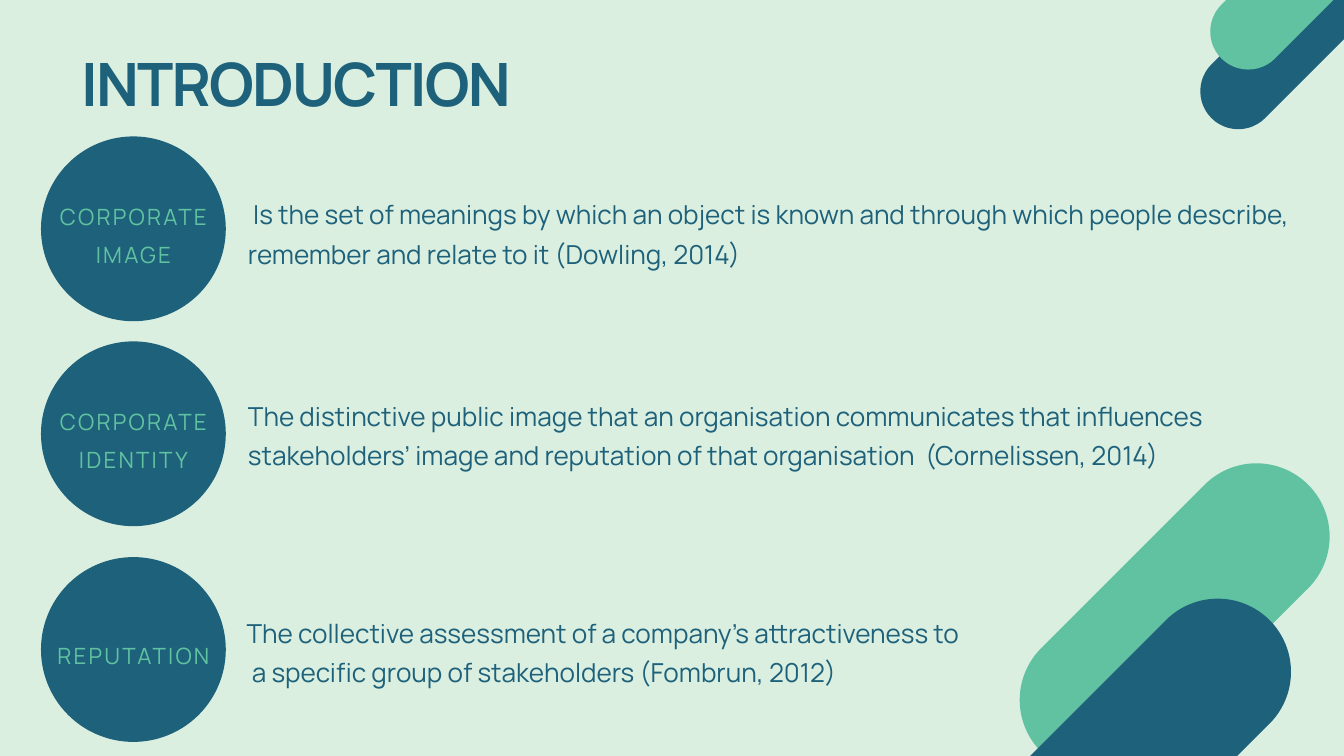
"""Build the introduction slide defining corporate image, identity and reputation."""
from dataclasses import dataclass

from pptx import Presentation
from pptx.dml.color import RGBColor
from pptx.enum.shapes import MSO_SHAPE as Preset
from pptx.enum.text import MSO_AUTO_SIZE as AutoSize, PP_ALIGN as Align
from pptx.util import Emu, Pt

EMU_PER_PX = 9144
MINT = RGBColor(0xDB, 0xEF, 0xE1)
TEAL = RGBColor(0x1D, 0x61, 0x7A)
GREEN = RGBColor(0x61, 0xC2, 0xA2)

FRAME = {
    "margin_left": 0,
    "margin_top": 0,
    "margin_right": 0,
    "margin_bottom": 0,
    "word_wrap": True,
    "auto_size": AutoSize.SHAPE_TO_FIT_TEXT,
}
CIRCLE_LEFT, CIRCLE_SIZE = 61, 275
LABEL_LEFT, LABEL_WIDTH = -16, 429
DEFINITION_WIDTH, DEFINITION_HEIGHT = 1631, 118


@dataclass(frozen=True)
class Box:
    left: int
    top: int
    width: int
    height: int

    def emu(self) -> list[Emu]:
        return [Emu(px * EMU_PER_PX) for px in (self.left, self.top, self.width, self.height)]


@dataclass(frozen=True)
class TextStyle:
    font: dict
    paragraph: dict
    color: RGBColor
    tracking: int = 0


@dataclass(frozen=True)
class Pill:
    box: Box
    color: RGBColor


@dataclass(frozen=True)
class Topic:
    circle_top: int
    label_top: int
    label_height: int
    label: tuple[str, ...]
    definition_left: int
    definition_top: int
    definition: tuple[str, ...]


TITLE = TextStyle(
    {"name": "Manrope", "size": Pt(64), "bold": True},
    {"alignment": Align.RIGHT, "line_spacing": Pt(70.4)},
    TEAL, -192,
)
LABEL = TextStyle(
    {"name": "Manrope", "size": Pt(24)},
    {"alignment": Align.CENTER, "line_spacing": Pt(40.8)},
    GREEN, 239,
)
DEFINITION = TextStyle(
    {"name": "Manrope", "size": Pt(28)},
    {"alignment": Align.LEFT, "line_spacing": Pt(42)},
    TEAL,
)

PILLS = (
    Pill(Box(1755, 4, 326, 113), TEAL),
    Pill(Box(1778, -65, 270, 113), GREEN),
    Pill(Box(1467, 811, 562, 218), GREEN),
    Pill(Box(1302, 1057, 688, 218), TEAL),
)
TOPICS = (
    Topic(203, 286, 115, ("CORPORATE", "IMAGE"), 369, 284, (
        " Is the set of meanings by which an object is known and through which "
        "people describe, remember and relate to it (Dowling, 2014)",
    )),
    Topic(508, 590, 115, ("CORPORATE", "IDENTITY"), 369, 584, (
        "The distinctive public image that an organisation communicates that influences "
        "stakeholders’ image and reputation of that organisation  (Cornelissen, 2014)",
    )),
    Topic(829, 939, 53, ("REPUTATION",), 367, 907, (
        "The collective assessment of a company’s attractiveness to",
        " a specific group of stakeholders (Fombrun, 2012)",
    )),
)


def apply(target: object, values: dict) -> None:
    for name, value in values.items():
        setattr(target, name, value)


def add_solid(slide, preset: Preset, box: Box, color: RGBColor):
    solid = slide.shapes.add_shape(preset, *box.emu())
    solid.shadow.inherit = False
    solid.fill.solid()
    solid.fill.fore_color.rgb = color
    solid.line.fill.background()
    return solid


def add_pill(slide, pill: Pill) -> None:
    capsule = add_solid(slide, Preset.ROUNDED_RECTANGLE, pill.box, pill.color)
    capsule.adjustments[0] = 0.5
    capsule.rotation = 315


def add_text(slide, box: Box, lines: tuple[str, ...], style: TextStyle) -> None:
    frame = slide.shapes.add_textbox(*box.emu()).text_frame
    apply(frame, FRAME)
    for index, line in enumerate(lines):
        paragraph = frame.add_paragraph() if index else frame.paragraphs[0]
        apply(paragraph, style.paragraph)
        run = paragraph.add_run()
        run.text = line
        apply(run.font, style.font)
        run.font.color.rgb = style.color
        if style.tracking:
            run._r.get_or_add_rPr().set("spc", str(style.tracking))


def add_topic(slide, topic: Topic) -> None:
    circle = Box(CIRCLE_LEFT, topic.circle_top, CIRCLE_SIZE, CIRCLE_SIZE)
    label = Box(LABEL_LEFT, topic.label_top, LABEL_WIDTH, topic.label_height)
    definition = Box(topic.definition_left, topic.definition_top,
                     DEFINITION_WIDTH, DEFINITION_HEIGHT)
    add_solid(slide, Preset.OVAL, circle, TEAL)
    add_text(slide, label, topic.label, LABEL)
    add_text(slide, definition, topic.definition, DEFINITION)


def main() -> None:
    deck = Presentation()
    deck.slide_width = Emu(2000 * EMU_PER_PX)
    deck.slide_height = Emu(1125 * EMU_PER_PX)
    slide = deck.slides.add_slide(deck.slide_layouts[6])
    slide.background.fill.solid()
    slide.background.fill.fore_color.rgb = MINT
    for pill in PILLS:
        add_pill(slide, pill)
    add_text(slide, Box(82, 79, 678, 100), ("INTRODUCTION",), TITLE)
    for topic in TOPICS:
        add_topic(slide, topic)
    deck.save("out.pptx")


if __name__ == "__main__":
    main()
